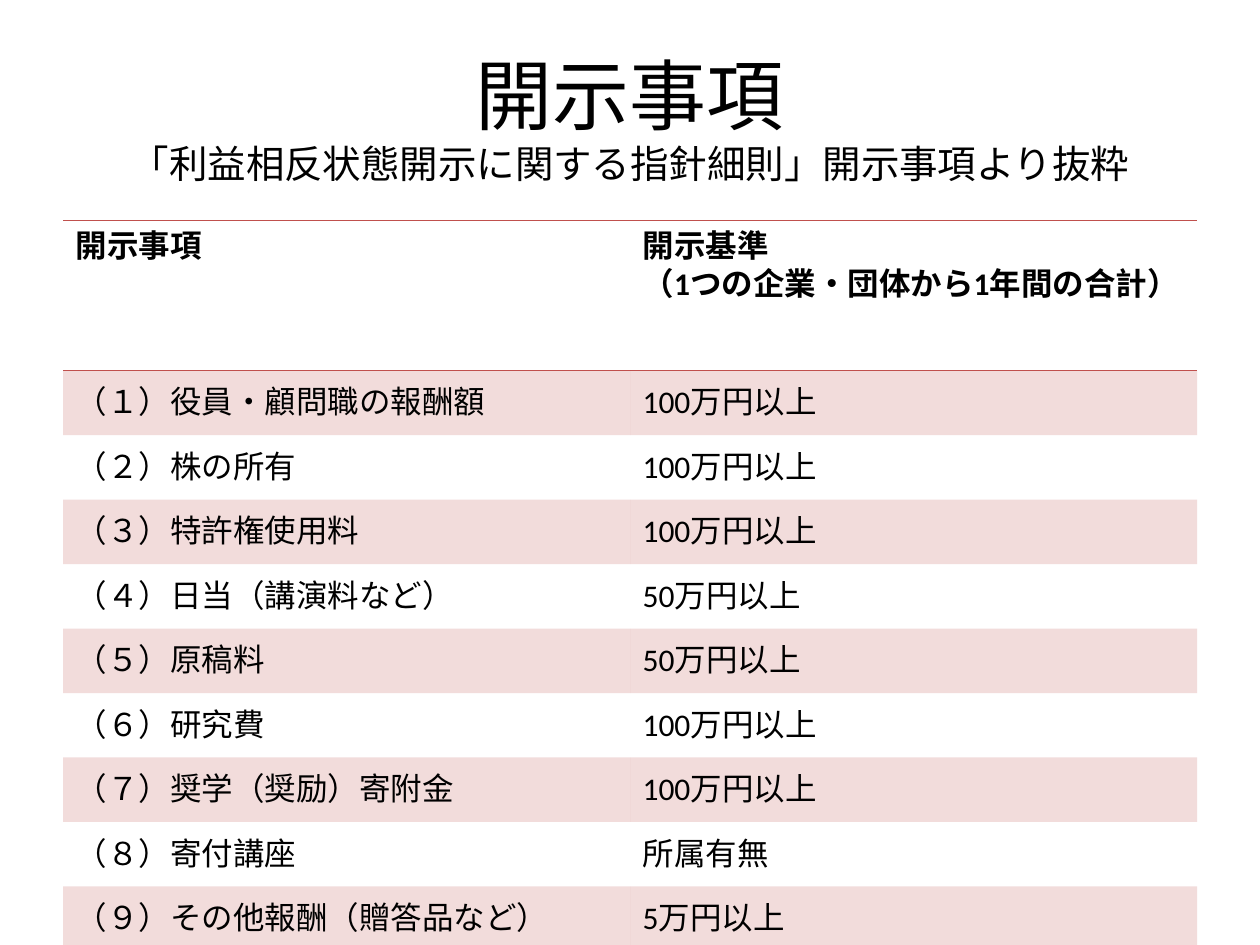
from pptx import Presentation
from pptx.dml.color import RGBColor
from pptx.enum.text import MSO_ANCHOR, PP_ALIGN
from pptx.oxml.ns import qn
from pptx.oxml.xmlchemy import OxmlElement
from pptx.util import Cm, Pt

HEX = {"ink": "000000", "rule": "C0504D"}
FACE = "Calibri"
PLAIN = "{2D5ABB26-0587-4C30-8999-92F81FD0307C}"
LEFT, WIDTH = Cm(1.27), Cm(22.86)
TITLE = [("開示事項", 44), ("「利益相反状態開示に関する指針細則」開示事項より抜粋", 22)]
HEAD = ("開示事項", "開示基準\n（1つの企業・団体から1年間の合計）")
ITEMS = [
    ("（１）役員・顧問職の報酬額", "100万円以上"),
    ("（２）株の所有", "100万円以上"),
    ("（３）特許権使用料", "100万円以上"),
    ("（４）日当（講演料など）", "50万円以上"),
    ("（５）原稿料", "50万円以上"),
    ("（６）研究費", "100万円以上"),
    ("（７）奨学（奨励）寄附金", "100万円以上"),
    ("（８）寄付講座", "所属有無"),
    ("（９）その他報酬（贈答品など）", "5万円以上"),
]


def style(run, size, bold=False):
    """Set the Latin and East Asian face, size, weight and colour of a run."""
    for key, val in {"name": FACE, "size": Pt(size), "bold": bold}.items():
        setattr(run.font, key, val)
    run.font.color.rgb = RGBColor.from_string(HEX["ink"])
    east = OxmlElement("a:ea")
    east.set("typeface", FACE)
    run._r.get_or_add_rPr().find(qn("a:latin")).addnext(east)


def add_title(slide):
    """Add the heading with its smaller second line."""
    frame = slide.shapes.add_textbox(LEFT, Cm(0.76), WIDTH, Cm(3.18)).text_frame
    for key, val in {"word_wrap": True, "vertical_anchor": MSO_ANCHOR.MIDDLE}.items():
        setattr(frame, key, val)
    para = frame.paragraphs[0]
    para.alignment = PP_ALIGN.CENTER
    for num, (text, size) in enumerate(TITLE):
        if num:
            para.add_line_break()
        run = para.add_run()
        run.text = text
        style(run, size)


def add_rule(cell, side):
    """Draw a one-point border on one side of a cell."""
    line = OxmlElement(f"a:{side}")
    line.set("w", str(Pt(1)))
    fill = OxmlElement("a:solidFill")
    tone = OxmlElement("a:srgbClr")
    tone.set("val", HEX["rule"])
    fill.append(tone)
    line.append(fill)
    cell._tc.get_or_add_tcPr().append(line)


def add_tint(cell):
    """Fill a cell with the rule colour at a fifth of its strength."""
    cell.fill.solid()
    cell.fill.fore_color.rgb = RGBColor.from_string(HEX["rule"])
    alpha = OxmlElement("a:alpha")
    alpha.set("val", "20000")
    next(cell._tc.tcPr.find(qn("a:solidFill")).iterchildren()).append(alpha)


def fill_cell(cell, text, row):
    """Write one cell with the borders and band of its row."""
    cell.text = text
    cell.vertical_anchor = MSO_ANCHOR.MIDDLE if row else MSO_ANCHOR.TOP
    for para in cell.text_frame.paragraphs:
        for run in para.runs:
            style(run, 18, row == 0)
    sides = {0: ("lnT", "lnB"), len(ITEMS): ("lnB",)}
    for side in sides.get(row, ()):
        add_rule(cell, side)
    if row % 2:
        add_tint(cell)
    else:
        cell.fill.background()


def add_grid(slide):
    """Add the table of items and thresholds."""
    rows = [HEAD, *ITEMS]
    shape = slide.shapes.add_table(len(rows), 2, LEFT, Cm(4.45), WIDTH, Cm(14.72))
    grid = shape.table
    grid._tbl.tblPr.find(qn("a:tableStyleId")).text = PLAIN
    for key in ("first_row", "horz_banding"):
        setattr(grid, key, False)
    for row, texts in enumerate(rows):
        grid.rows[row].height = Cm(1.3 if row else 3.02)
        for col, text in enumerate(texts):
            fill_cell(grid.cell(row, col), text, row)


def main():
    """Build and save the slide."""
    deck = Presentation()
    deck.slide_width, deck.slide_height = Cm(25.4), Cm(19.05)
    slide = deck.slides.add_slide(deck.slide_layouts[6])
    add_title(slide)
    add_grid(slide)
    deck.save("out.pptx")


if __name__ == "__main__":
    main()
